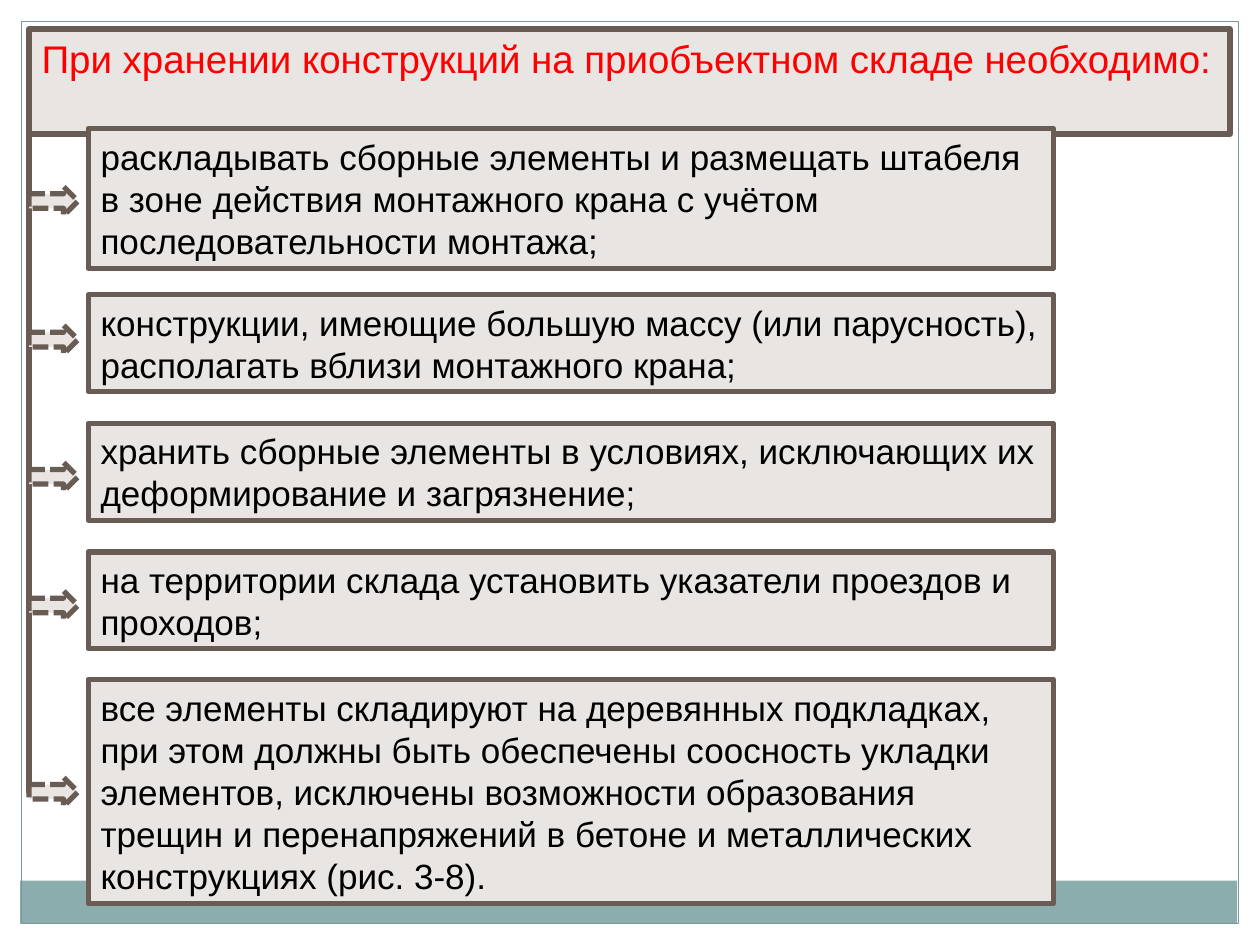
from lxml.etree import SubElement
from pptx import Presentation
from pptx.dml.color import RGBColor
from pptx.enum.dml import MSO_LINE
from pptx.enum.shapes import MSO_CONNECTOR, MSO_SHAPE
from pptx.enum.text import MSO_ANCHOR as ANCHOR, MSO_AUTO_SIZE as AUTO_SIZE, PP_ALIGN as ALIGN
from pptx.oxml.ns import qn
from pptx.util import Pt

SAND = RGBColor(0xE8, 0xE5, 0xE2)
BROWN = RGBColor(0x69, 0x5C, 0x54)
TEAL = RGBColor(0x8C, 0xAD, 0xAE)
FRAME = RGBColor(0x7C, 0x99, 0x9A)
RED = RGBColor(0xFF, 0x00, 0x00)
BLACK = RGBColor(0x00, 0x00, 0x00)

TITLE = "При хранении конструкций на приобъектном складе необходимо:"
REQUIREMENTS = [
    (73.4, 80, 106.6, "раскладывать сборные элементы и размещать штабеля в зоне действия "
     "монтажного крана с учётом последовательности монтажа;"),
    (168.5, 55.4, 185.8, "конструкции, имеющие большую массу (или парусность), "
     "располагать вблизи монтажного крана;"),
    (241.9, 55.4, 264.2, "хранить сборные элементы в условиях, исключающих их "
     "деформирование и загрязнение;"),
    (315.4, 55.4, 337.7, "на территории склада установить указатели проездов и проходов;"),
    (388.1, 128.2, 444.2, "все элементы складируют на деревянных подкладках, при этом должны "
     "быть обеспечены соосность укладки элементов, исключены возможности образования трещин "
     "и перенапряжений в бетоне и металлических конструкциях (рис. 3-8)."),
]
STEM_LEFT = 16.6
BOX_LEFT, BOX_WIDTH = 50.4, 551.5
ARROW_WIDTH, ARROW_HEIGHT = 28, 16.6


def paint(shape, fill=None, line=None, line_width=3):
    """Set the fill and outline of a shape, leaving out what is not given."""
    if fill is None:
        shape.fill.background()
    else:
        shape.fill.solid()
        shape.fill.fore_color.rgb = fill
    if line is None:
        shape.line.fill.background()
    else:
        shape.line.color.rgb = line
        shape.line.width = Pt(line_width)


def add_shape(slide, kind, left, top, width, height, **colours):
    """Add a flat preset shape measured in points."""
    shape = slide.shapes.add_shape(kind, Pt(left), Pt(top), Pt(width), Pt(height))
    shape.shadow.inherit = False
    paint(shape, **colours)
    return shape


def write_text(shape, text, size=20, colour=BLACK, anchor=ANCHOR.TOP):
    """Write one left-aligned paragraph into a shape."""
    frame = shape.text_frame
    frame.text = text
    frame.word_wrap = True
    frame.auto_size = AUTO_SIZE.SHAPE_TO_FIT_TEXT
    frame.vertical_anchor = anchor
    paragraph = frame.paragraphs[0]
    paragraph.alignment = ALIGN.LEFT
    font = paragraph.runs[0].font
    font.name, font.size, font.color.rgb = "Arial", Pt(size), colour


def add_background(slide):
    """Add the bottom band and the thin frame."""
    add_shape(slide, MSO_SHAPE.RECTANGLE, 11.5, 503.3, 695.5, 24.5, fill=TEAL)
    add_shape(slide, MSO_SHAPE.RECTANGLE, 12.2, 12.2, 695.5, 515.5, line=FRAME, line_width=0.75)


def add_title(slide):
    """Place and format the title placeholder."""
    title = slide.shapes.title
    title.left, title.top, title.width, title.height = Pt(STEM_LEFT), Pt(16.6), Pt(686.2), Pt(33.8)
    paint(title, fill=SAND, line=BROWN)
    write_text(title, TITLE, size=22, colour=RED)


def add_stem(slide, top, bottom):
    """Add the vertical line that carries the arrows."""
    stem = slide.shapes.add_connector(
        MSO_CONNECTOR.STRAIGHT, Pt(STEM_LEFT), Pt(top), Pt(STEM_LEFT), Pt(bottom))
    stem.line.color.rgb = BROWN
    stem.line.width = Pt(3)
    SubElement(stem._element.spPr, qn("a:effectLst"))


def add_arrow(slide, top):
    """Add a dashed block arrow starting at the stem."""
    arrow = add_shape(slide, MSO_SHAPE.RIGHT_ARROW, STEM_LEFT, top,
                      ARROW_WIDTH, ARROW_HEIGHT, fill=SAND, line=BROWN)
    arrow.line.dash_style = MSO_LINE.SQUARE_DOT


def add_requirement(slide, top, height, text):
    """Add a bordered box with one storage requirement."""
    box = add_shape(slide, MSO_SHAPE.RECTANGLE, BOX_LEFT, top, BOX_WIDTH, height,
                    fill=SAND, line=BROWN)
    write_text(box, text, anchor=ANCHOR.MIDDLE)


def main():
    """Build the slide and save it."""
    presentation = Presentation()
    presentation.slide_width, presentation.slide_height = Pt(720), Pt(540)
    slide = presentation.slides.add_slide(presentation.slide_layouts[5])
    add_background(slide)
    add_title(slide)
    add_stem(slide, 50.4, 452.9)
    for top, height, arrow_top, text in REQUIREMENTS:
        add_requirement(slide, top, height, text)
        add_arrow(slide, arrow_top)
    presentation.save("out.pptx")


if __name__ == "__main__":
    main()
